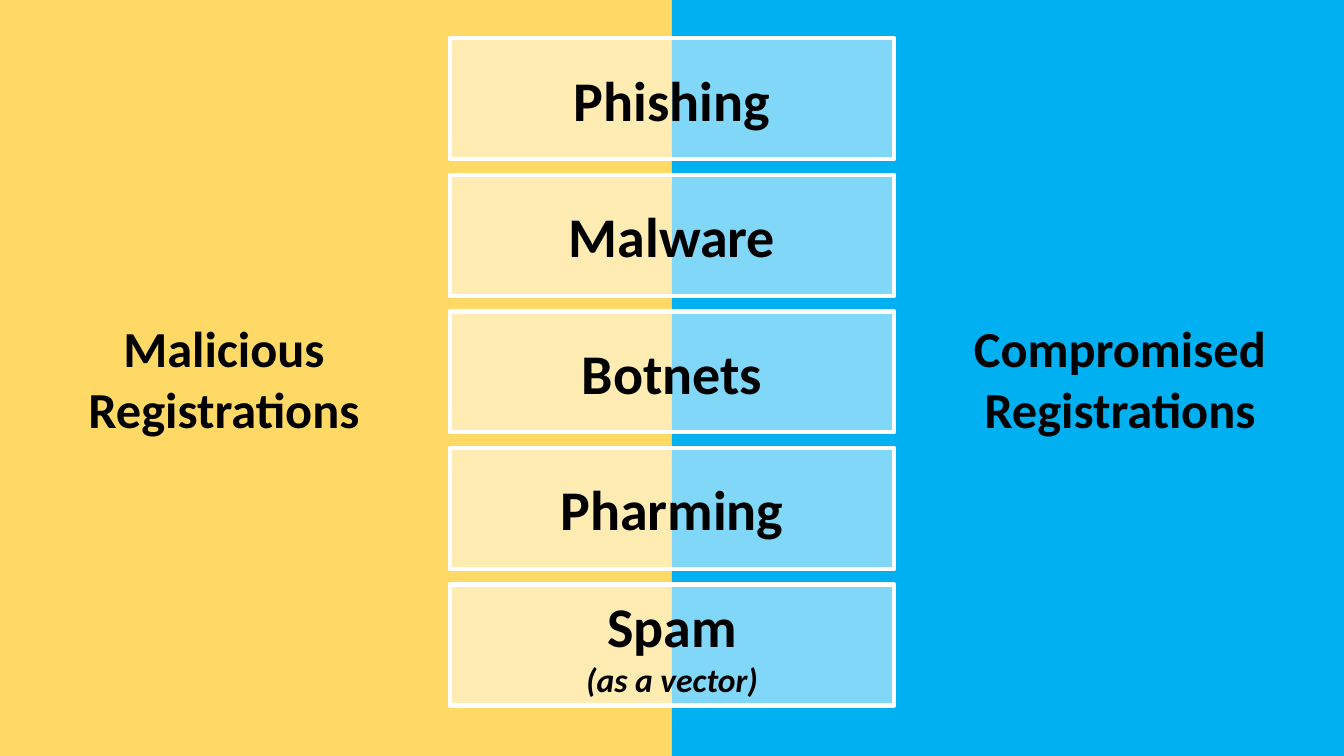
from dataclasses import dataclass

from lxml.etree import SubElement
from pptx import Presentation
from pptx.dml.color import RGBColor
from pptx.enum.shapes import MSO_SHAPE
from pptx.enum.text import MSO_ANCHOR, PP_ALIGN
from pptx.oxml.ns import qn
from pptx.util import Inches, Pt


@dataclass(frozen=True)
class Theme:
    font: str = "Calibri"
    ink: RGBColor = RGBColor(0, 0, 0)
    white: RGBColor = RGBColor(255, 255, 255)
    gold: RGBColor = RGBColor(0xFF, 0xD9, 0x66)
    blue: RGBColor = RGBColor(0x00, 0xB0, 0xF0)
    threat: int = 40
    side: int = 36
    note: int = 24


theme = Theme()
deck = Presentation()
deck.slide_width, deck.slide_height = Inches(13.33), Inches(7.5)
wide, high = deck.slide_width, deck.slide_height
slide = deck.slides.add_slide(deck.slide_layouts[6])


def add_rect(left, top, width, height, color):
    rect = slide.shapes.add_shape(
        MSO_SHAPE.RECTANGLE, int(left), int(top), int(width), int(height))
    rect.shadow.inherit = False
    rect.fill.solid()
    rect.fill.fore_color.rgb = color
    rect.line.fill.background()
    return rect


def write(shape, text, size):
    """Centre bold text in the shape, one paragraph per line."""
    frame = shape.text_frame
    frame.text = text
    frame.word_wrap = True
    frame.vertical_anchor = MSO_ANCHOR.MIDDLE
    for para in frame.paragraphs:
        para.alignment = PP_ALIGN.CENTER
        for run in para.runs:
            run.font.name = theme.font
            run.font.size = Pt(size)
            run.font.bold = True
            run.font.color.rgb = theme.ink


# Two halves of the slide
for col, color in enumerate((theme.gold, theme.blue)):
    add_rect(col * wide / 2, 0, wide / 2, high, color)

# Threats shared by both halves
box_w, box_h = Inches(4.41), Inches(1.2)
first, pitch = Inches(0.38), Inches(1.355)
threats = ("Phishing", "Malware", "Botnets", "Pharming", "Spam\n(as a vector)")
for row, threat in enumerate(threats):
    box = add_rect((wide - box_w) / 2, first + row * pitch, box_w, box_h, theme.white)
    tint = box.fill._xPr.find(qn("a:solidFill"))[0]
    SubElement(tint, qn("a:alpha")).set("val", "50000")
    box.line.color.rgb = theme.white
    box.line.width = Pt(3)
    write(box, threat, theme.threat)
    for para in box.text_frame.paragraphs[1:]:
        para.runs[0].font.size = Pt(theme.note)
        para.runs[0].font.italic = True

# Side labels fill the outer thirds
label_h = Inches(1.31)
labels = {0: "Malicious\nRegistrations", 2: "Compromised\nRegistrations"}
for third, text in labels.items():
    label = slide.shapes.add_textbox(
        int(third * wide / 3), int((high - label_h) / 2), int(wide / 3), label_h)
    write(label, text, theme.side)

deck.save("out.pptx")
